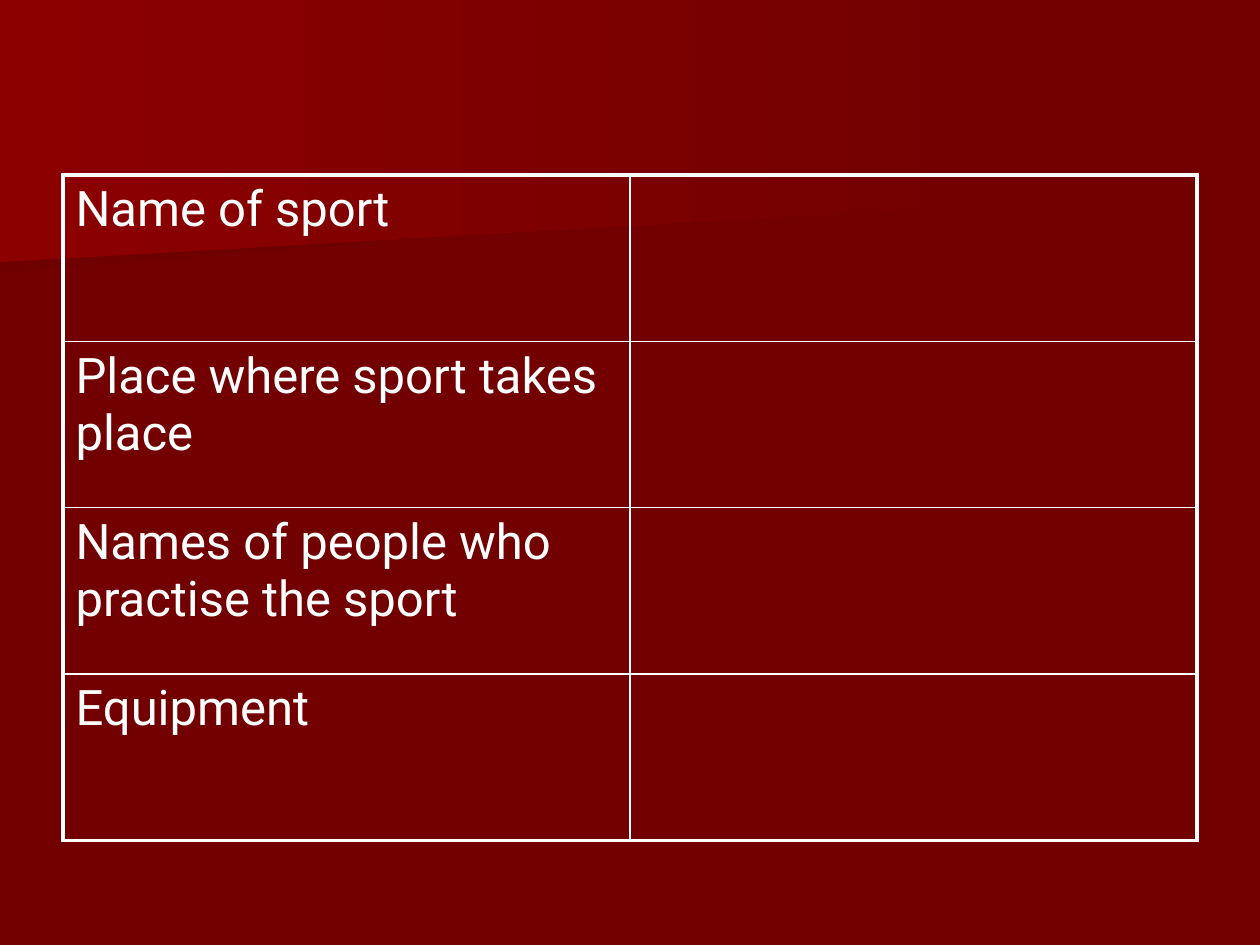
from lxml.etree import SubElement
from pptx import Presentation
from pptx.dml.color import RGBColor
from pptx.oxml.ns import qn
from pptx.util import Inches, Pt

COLORS = {
    "background": "720000",
    "glow": "8C0000",
    "shade": "6F0000",
    "text": "FFFFFF",
    "border": "FFFFFF",
}
PROMPTS = [
    "Name of sport",
    "Place where sport takes place",
    "Names of people who practise the sport",
    "Equipment",
]


class SportSlide:
    font = "Roboto"
    text_size = Pt(28)
    outer_line = Pt(2.25)
    inner_line = Pt(1)

    def __init__(self, slide):
        self.slide = slide

    def color(self, name):
        return RGBColor.from_string(COLORS[name])

    def background(self, color):
        fill = self.slide.background.fill
        fill.solid()
        fill.fore_color.rgb = self.color(color)

    def band(self, points, start_color, end_color):
        corners = [(Inches(x), Inches(y)) for x, y in points]
        builder = self.slide.shapes.build_freeform(*corners[0])
        builder.add_line_segments(corners[1:], close=True)
        band = builder.convert_to_shape()
        band.shadow.inherit = False
        band.line.fill.background()
        band.fill.gradient()
        band.fill.gradient_angle = 0
        for stop, name in zip(band.fill.gradient_stops, (start_color, end_color)):
            stop.color.rgb = self.color(name)

    def cell_border(self, cell, side, width):
        line = SubElement(cell._tc.get_or_add_tcPr(), qn(f"a:ln{side}"), w=str(width))
        fill = SubElement(line, qn("a:solidFill"))
        SubElement(fill, qn("a:srgbClr"), val=COLORS["border"])

    def format_cell(self, cell, outer_sides):
        for side, is_outer in outer_sides.items():
            self.cell_border(cell, side, self.outer_line if is_outer else self.inner_line)
        cell.fill.background()
        for paragraph in cell.text_frame.paragraphs:
            font = paragraph.font
            for run in paragraph.runs:
                font = run.font
            font.name = self.font
            font.size = self.text_size
            font.bold = False
            font.color.rgb = self.color("text")

    def worksheet(self, prompts, left, top, width, height):
        rows, columns = len(prompts), 2
        table = self.slide.shapes.add_table(
            rows, columns, Inches(left), Inches(top), Inches(width), Inches(height)
        ).table
        table.first_row = table.horz_banding = False
        for row, prompt in enumerate(prompts):
            table.cell(row, 0).text_frame.text = prompt
            for column in range(columns):
                self.format_cell(table.cell(row, column), {
                    "L": column == 0,
                    "R": column == columns - 1,
                    "T": row == 0,
                    "B": row == rows - 1,
                })


def main():
    presentation = Presentation()
    presentation.slide_width = Inches(10)
    presentation.slide_height = Inches(7.5)
    blank_layout = presentation.slide_layouts[6]
    sport = SportSlide(presentation.slides.add_slide(blank_layout))

    # Backdrop: shaded edge below the glowing band
    sport.background("background")
    sport.band([(7.78, 1.53), (0, 2.17), (0, 1.01), (7.79, 1.01), (7.78, 1.28)],
               "shade", "background")
    sport.band([(7.92, 1.62), (0, 2.08), (0, 0), (7.92, 0)], "glow", "background")

    # Worksheet with an empty answer column
    sport.worksheet(PROMPTS, left=0.5, top=1.39, width=9, height=5.28)

    presentation.save("out.pptx")


if __name__ == "__main__":
    main()
